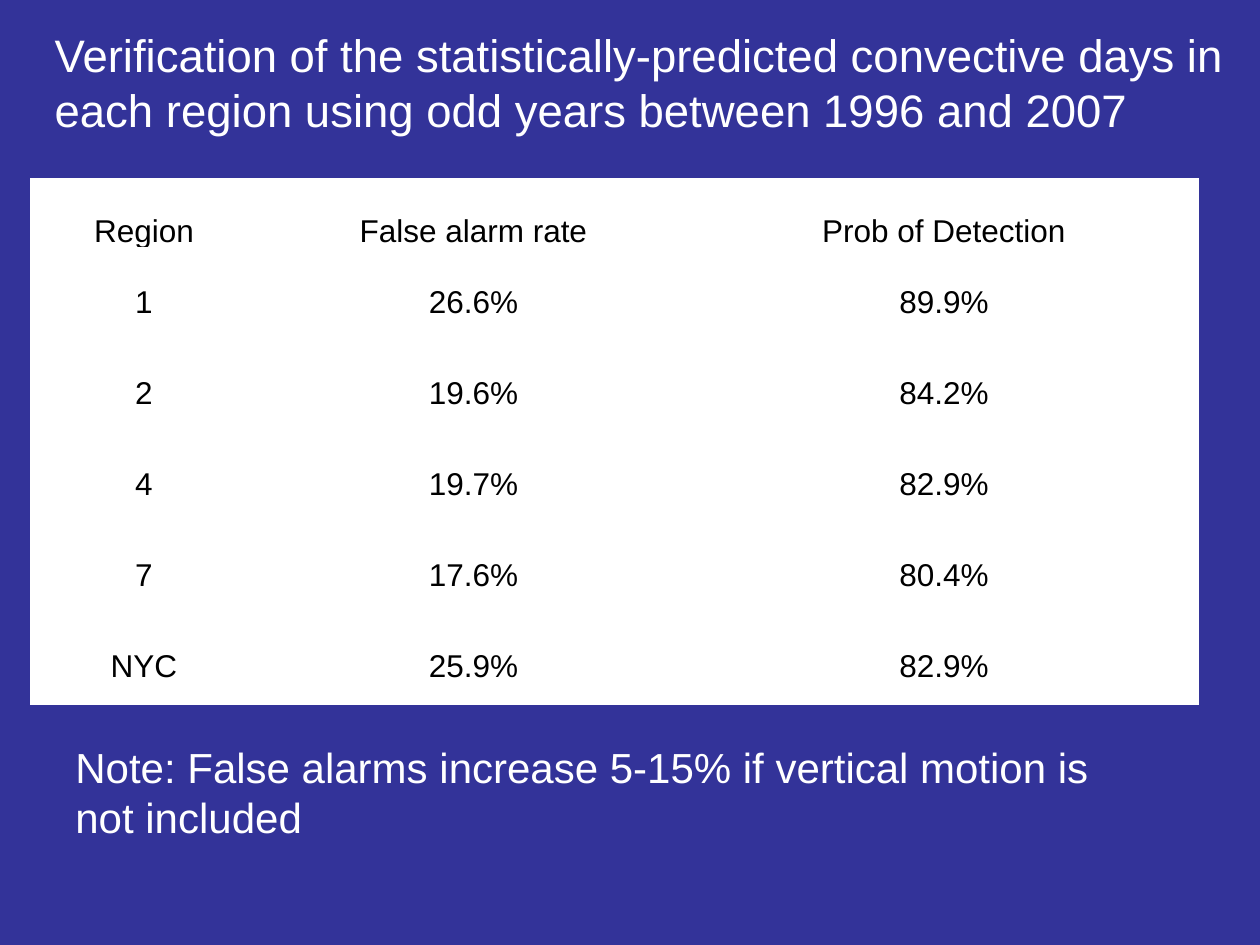
from lxml.etree import SubElement
from pptx import Presentation
from pptx.dml.color import RGBColor
from pptx.enum.text import MSO_ANCHOR, PP_ALIGN
from pptx.oxml.ns import qn
from pptx.util import Emu, Pt

PX = 914400 // 126
NAVY, WHITE, BLACK = "333399", "FFFFFF", "000000"

TITLE = ("Verification of the statistically-predicted convective days in each region "
         "using odd years between 1996 and 2007")
NOTE = "Note: False alarms increase 5-15% if vertical motion is not included"
SCORES = [
    ("Region", "False alarm rate", "Prob of Detection"),
    ("1", "26.6%", "89.9%"),
    ("2", "19.6%", "84.2%"),
    ("4", "19.7%", "82.9%"),
    ("7", "17.6%", "80.4%"),
    ("NYC", "25.9%", "82.9%"),
]
COLUMN_WIDTHS = (226, 433, 508)
HEADER_HEIGHT, ROW_HEIGHT = 23, 91
TABLE_BOX = (31, 179, sum(COLUMN_WIDTHS), 532)
TITLE_BOX = (42, 21, 1197, 123)
NOTE_BOX = (63, 735, 1103, 190)


def px(length):
    return Emu(length * PX)


def color(value):
    return RGBColor.from_string(value)


def style(paragraph, size, ink, align=PP_ALIGN.LEFT):
    paragraph.alignment = align
    for run in paragraph.runs:
        run.font.name = "Arial"
        run.font.size = Pt(size)
        run.font.color.rgb = color(ink)


def fill_text(shape, text, size):
    frame = shape.text_frame
    frame.text = text
    frame.word_wrap = True
    frame.vertical_anchor = MSO_ANCHOR.TOP
    style(frame.paragraphs[0], size, WHITE)


def add_borders(cell, bottom):
    properties = cell._tc.get_or_add_tcPr()
    for position, (side, width) in enumerate((("L", 1), ("R", 1), ("T", 1), ("B", bottom))):
        line = SubElement(properties, qn(f"a:ln{side}"), w=str(Pt(width)))
        fill = SubElement(line, qn("a:solidFill"))
        SubElement(fill, qn("a:srgbClr"), val=WHITE)
        properties.insert(position, line)


def fill_cell(cell, text, bottom):
    cell.text = text
    cell.margin_left = cell.margin_right = px(9)
    cell.margin_top = cell.margin_bottom = 0
    cell.fill.solid()
    cell.fill.fore_color.rgb = color(WHITE)
    paragraph = cell.text_frame.paragraphs[0]
    paragraph.line_spacing = 2.0
    style(paragraph, 18, BLACK, PP_ALIGN.CENTER)
    add_borders(cell, bottom)


def add_scores(slide):
    frame = slide.shapes.add_table(len(SCORES), len(COLUMN_WIDTHS), *map(px, TABLE_BOX))
    table = frame.table
    for column, width in zip(table.columns, COLUMN_WIDTHS):
        column.width = px(width)
    for index, (row, values) in enumerate(zip(table.rows, SCORES)):
        row.height = px(ROW_HEIGHT if index else HEADER_HEIGHT)
        for cell, value in zip(row.cells, values):
            fill_cell(cell, value, 1 if index else 3)
    frame.height = px(TABLE_BOX[3])


def main():
    deck = Presentation()
    deck.slide_width, deck.slide_height = px(1260), px(945)
    slide = deck.slides.add_slide(deck.slide_layouts[5])
    slide.background.fill.solid()
    slide.background.fill.fore_color.rgb = color(NAVY)

    title = slide.shapes.title
    title.left, title.top, title.width, title.height = map(px, TITLE_BOX)
    fill_text(title, TITLE, 26)
    add_scores(slide)
    fill_text(slide.shapes.add_textbox(*map(px, NOTE_BOX)), NOTE, 24)
    deck.save("out.pptx")


if __name__ == "__main__":
    main()
